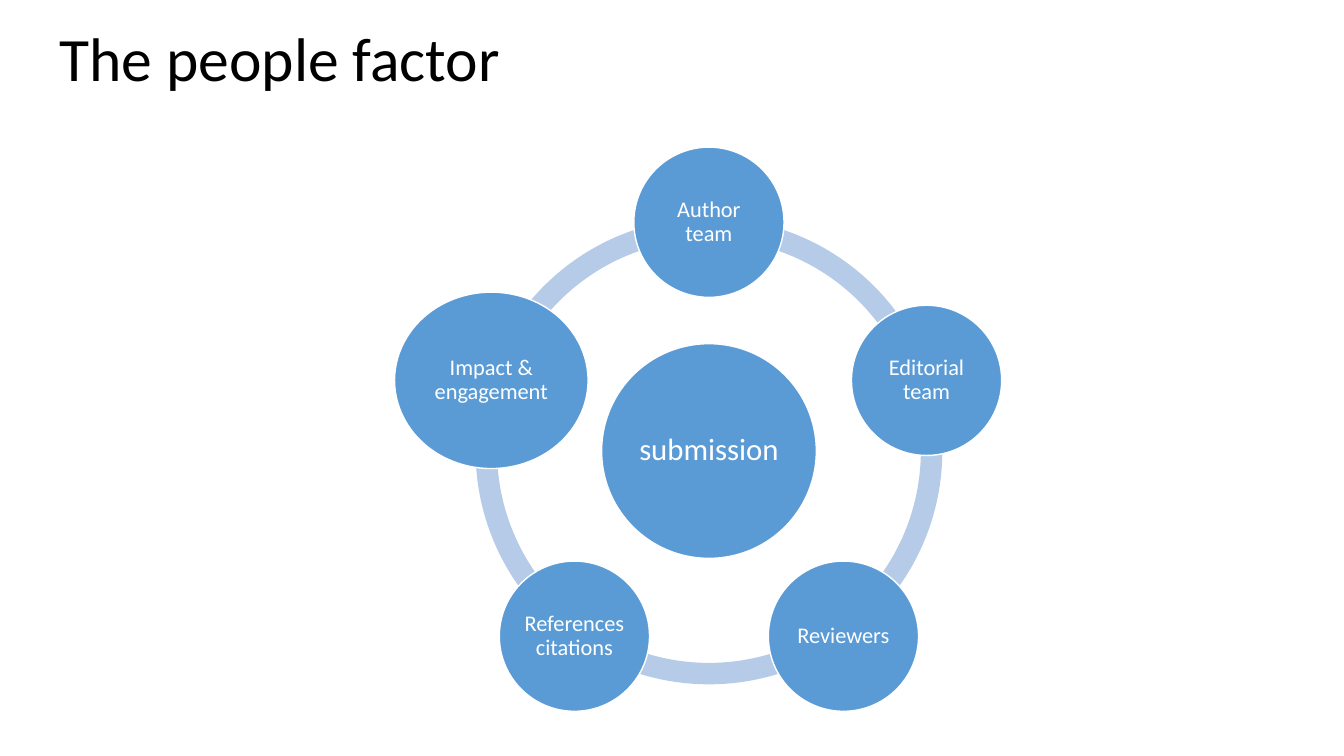
import math

import pptx
import pptx.dml.color
import pptx.enum.shapes
import pptx.enum.text
import pptx.util

COLS, ROWS = 80, 45
CENTER = (42.2, 26.85)
ORBIT = 13.62
RING = 27.78
HUB = 12.78
NODE = 8.94
NODES = [
    ("Author team", NODE, NODE),
    ("Editorial team", NODE, NODE),
    ("Reviewers", NODE, NODE),
    ("References citations", NODE, NODE),
    ("Impact & engagement", 11.52, 10.5),
]


class Deck:
    """Style and current slide; lengths are grid columns and rows."""

    font = "Calibri"
    colors = {"ink": "000000", "paper": "FFFFFF", "node": "5B9BD5", "ring": "B5CBE7"}

    def __init__(self):
        self.prs = pptx.Presentation()
        self.prs.slide_width = pptx.util.Inches(13.33)
        self.prs.slide_height = pptx.util.Inches(7.5)
        self.slide = self.prs.slides.add_slide(self.prs.slide_layouts[5])

    def color(self, name):
        return pptx.dml.color.RGBColor.from_string(self.colors[name])

    def box(self, left, top, width, height):
        col = self.prs.slide_width / COLS
        row = self.prs.slide_height / ROWS
        return [round(n) for n in (left * col, top * row, width * col, height * row)]

    def label(self, frame, text, size, color, align):
        frame.word_wrap = True
        frame.auto_size = pptx.enum.text.MSO_AUTO_SIZE.NONE
        frame.vertical_anchor = pptx.enum.text.MSO_ANCHOR.MIDDLE
        para = frame.paragraphs[0]
        para.alignment = align
        para.line_spacing = 0.9
        run = para.add_run()
        run.text = text
        run.font.name = self.font
        run.font.size = pptx.util.Pt(size)
        run.font.color.rgb = self.color(color)

    def title(self, text, *area):
        shape = self.slide.shapes.title
        shape.left, shape.top, shape.width, shape.height = self.box(*area)
        self.label(shape.text_frame, text, 44, "ink", pptx.enum.text.PP_ALIGN.LEFT)

    def shape(self, kind, fill, center, width, height):
        """Add a filled preset shape around its center."""
        x, y = center
        area = self.box(x - width / 2, y - height / 2, width, height)
        shape = self.slide.shapes.add_shape(kind, *area)
        shape.shadow.inherit = False
        shape.fill.solid()
        shape.fill.fore_color.rgb = self.color(fill)
        return shape

    def arc(self, center, size, start, end):
        """Add a ring segment running clockwise between two angles in degrees."""
        kind = pptx.enum.shapes.MSO_SHAPE.BLOCK_ARC
        shape = self.shape(kind, "ring", center, size, size)
        shape.line.fill.background()
        for i, angle in enumerate((start, end)):
            shape.adjustments[i] = angle % 360 * 0.6  # 60000 units a degree, scaled by 100000
        shape.adjustments[2] = 0.046

    def disc(self, text, center, width, height, size, inset):
        kind = pptx.enum.shapes.MSO_SHAPE.OVAL
        shape = self.shape(kind, "node", center, width, height)
        shape.line.color.rgb = self.color("paper")
        shape.line.width = pptx.util.Pt(1)
        frame = shape.text_frame
        pad = self.box(inset, inset, 0, 0)[0]
        frame.margin_left = frame.margin_right = pad
        frame.margin_top = frame.margin_bottom = pad
        self.label(frame, text, size, "paper", pptx.enum.text.PP_ALIGN.CENTER)


def main():
    deck = Deck()
    deck.title("The people factor", 2.94, 0.06, 69, 7.2)
    step = 360 / len(NODES)
    angles = [270 + i * step for i in range(len(NODES))]
    for angle in angles:
        deck.arc(CENTER, RING, angle, angle + step)
    deck.disc("submission", CENTER, HUB, HUB, 22, 0.18)
    for angle, (text, width, height) in zip(angles, NODES):
        turn = math.radians(angle)
        spot = (CENTER[0] + ORBIT * math.cos(turn), CENTER[1] + ORBIT * math.sin(turn))
        deck.disc(text, spot, width, height, 16, 0.12)
    deck.prs.save("out.pptx")


if __name__ == "__main__":
    main()
